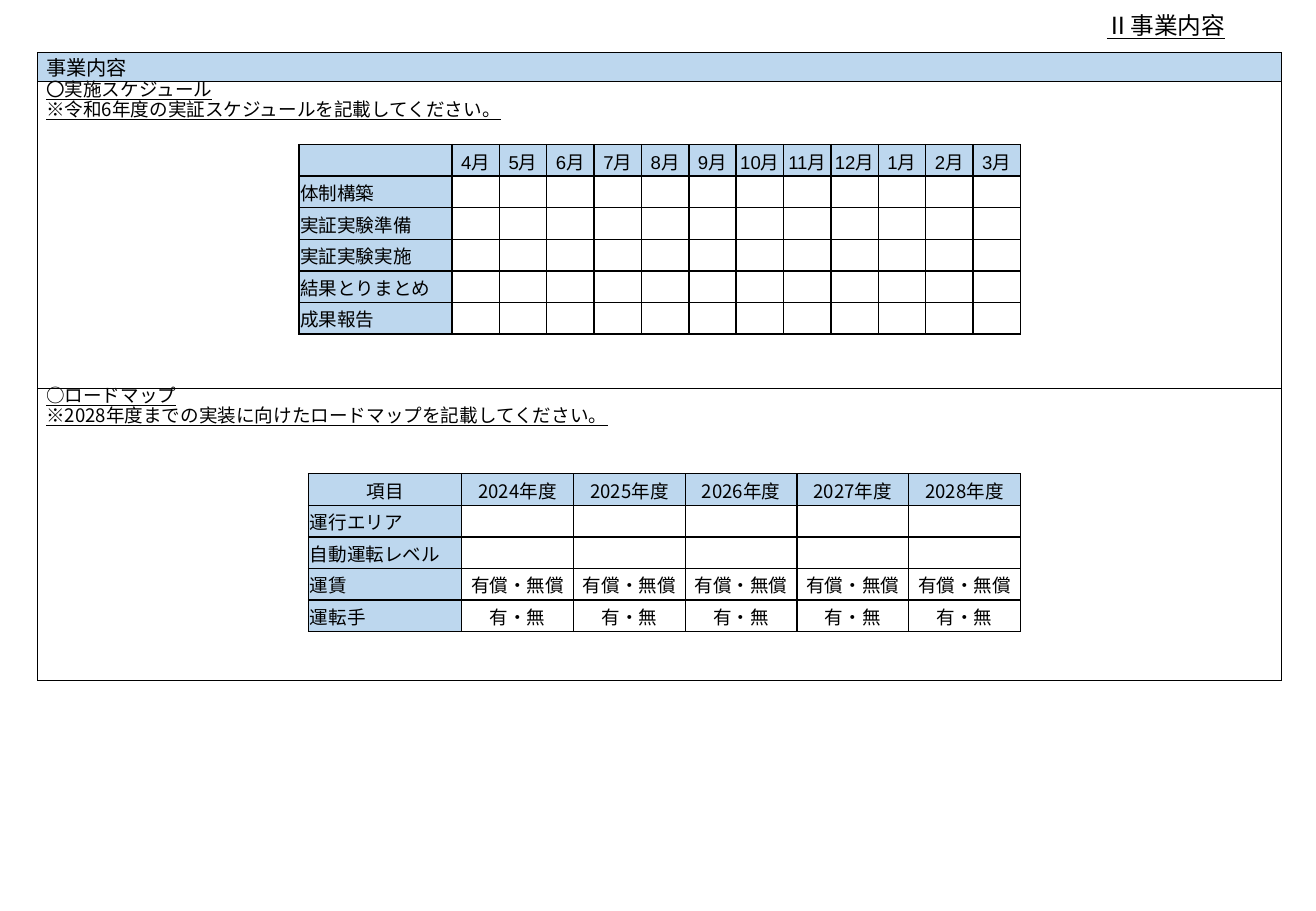
from lxml import etree
from pptx import Presentation
from pptx.dml.color import RGBColor
from pptx.enum import text
from pptx.oxml import ns
from pptx.util import Inches, Pt

COLORS = {"ink": "000000", "header": "BDD7EE"}
JP, LATIN = "Noto Sans CJK JP", "Arial"

TITLE = "Ⅱ事業内容"
SECTIONS = [
    ["事業内容"],
    ["〇実施スケジュール", "※令和6年度の実証スケジュールを記載してください。"],
    ["○ロードマップ", "※2028年度までの実装に向けたロードマップを記載してください。"],
]
MONTHS = [f"{m}月" for m in (4, 5, 6, 7, 8, 9, 10, 11, 12, 1, 2, 3)]
TASKS = ["体制構築", "実証実験準備", "実証実験実施", "結果とりまとめ", "成果報告"]
SCHEDULE = [[""] + MONTHS] + [[task] + [""] * len(MONTHS) for task in TASKS]
YEARS = [f"{y}年度" for y in range(2024, 2029)]
ITEMS = [("運行エリア", ""), ("自動運転レベル", ""), ("運賃", "有償・無償"), ("運転手", "有・無")]
ROADMAP = [["項目"] + YEARS] + [[item] + [value] * len(YEARS) for item, value in ITEMS]

ROW_H, LABEL_W = 0.26, 1.26


def add_text(p, content, size, font=JP, underline=None):
    r = p.add_run()
    r.text = content
    r.font.size = Pt(size)
    r.font.name = font
    r.font.underline = underline
    r.font.color.rgb = RGBColor.from_string(COLORS["ink"])
    etree.SubElement(r.font._element, ns.qn("a:ea"), typeface=JP)


def set_borders(cell, width):
    tcPr = cell._tc.get_or_add_tcPr()
    for side in ("lnL", "lnR", "lnT", "lnB"):
        ln = etree.SubElement(tcPr, ns.qn(f"a:{side}"), w=str(Pt(width)))
        fill = etree.SubElement(ln, ns.qn("a:solidFill"))
        etree.SubElement(fill, ns.qn("a:srgbClr"), val=COLORS["ink"])


def style_cell(cell, header, border, margins):
    set_borders(cell, border)
    if header:
        cell.fill.solid()
        cell.fill.fore_color.rgb = RGBColor.from_string(COLORS["header"])
    else:
        cell.fill.background()
    (cell.margin_left, cell.margin_top,
     cell.margin_right, cell.margin_bottom) = map(Inches, margins)


def add_table(slide, left, top, widths, heights):
    frame = slide.shapes.add_table(
        len(heights), len(widths), Inches(left), Inches(top),
        Inches(sum(widths)), Inches(sum(heights)))
    table = frame.table
    table.first_row = table.horz_banding = False
    for column, width in zip(table.columns, widths):
        column.width = Inches(width)
    for row, height in zip(table.rows, heights):
        row.height = Inches(height)
    return table


def add_sections(slide):
    table = add_table(slide, 0.31, 0.43, [10.23], [0.2, 2.52, 2.41])
    for i, lines in enumerate(SECTIONS):
        cell = table.cell(i, 0)
        style_cell(cell, i == 0, 0.25, (0.07, 0, 0.07, 0))
        tf = cell.text_frame
        for j, line in enumerate(lines):
            p = tf.add_paragraph() if j else tf.paragraphs[0]
            p.alignment = text.PP_ALIGN.JUSTIFY
            if i == 0:
                add_text(p, line, 12)
            else:
                p.line_spacing = Pt(12)
                add_text(p, line, 11, underline=True)


def add_grid(slide, left, top, col_w, rows, font):
    """Table with shaded headings in its first row and first column."""
    widths = [LABEL_W] + [col_w] * (len(rows[0]) - 1)
    table = add_table(slide, left, top, widths, [ROW_H] * len(rows))
    for i, row in enumerate(rows):
        for j, content in enumerate(row):
            cell = table.cell(i, j)
            style_cell(cell, i == 0 or j == 0, 1, (0.01, 0.01, 0.01, 0))
            cell.vertical_anchor = text.MSO_ANCHOR.MIDDLE
            p = cell.text_frame.paragraphs[0]
            if content:
                centred = i == 0 or j > 0
                p.alignment = text.PP_ALIGN.CENTER if centred else text.PP_ALIGN.LEFT
                add_text(p, content, 11, font)
            else:  # keeps empty rows from growing to the default text size
                etree.SubElement(p._p, ns.qn("a:endParaRPr"), sz="1100")


def add_title(slide):
    sp = slide.shapes.title
    sp.left, sp.top, sp.width, sp.height = map(Inches, (9.01, -0.06, 1.53, 0.44))
    tf = sp.text_frame
    tf.word_wrap = True
    tf.auto_size = text.MSO_AUTO_SIZE.NONE
    tf.vertical_anchor = text.MSO_ANCHOR.BOTTOM
    p = tf.paragraphs[0]
    p.alignment = text.PP_ALIGN.LEFT
    p.line_spacing = 0.9
    add_text(p, TITLE, 14, underline=True)


def main():
    prs = Presentation()
    prs.slide_width, prs.slide_height = Inches(10.83), Inches(7.5)
    slide = prs.slides.add_slide(prs.slide_layouts[5])
    add_sections(slide)
    add_title(slide)
    add_grid(slide, 2.46, 1.19, 0.39, SCHEDULE, LATIN)
    add_grid(slide, 2.54, 3.9, 0.92, ROADMAP, JP)
    prs.save("out.pptx")


if __name__ == "__main__":
    main()
